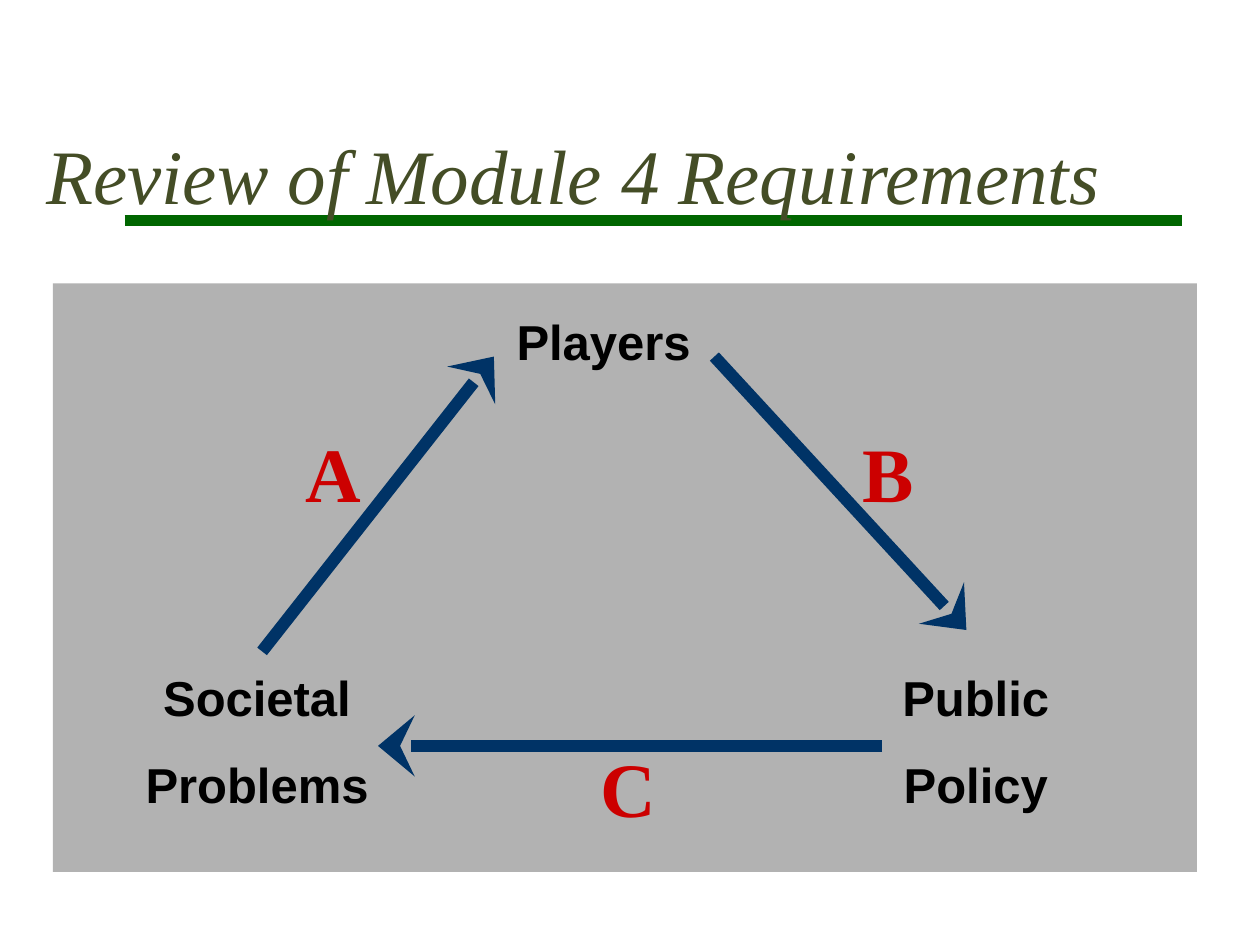
from dataclasses import dataclass

from lxml import etree
from pptx import Presentation
from pptx.dml.color import RGBColor
from pptx.enum.shapes import MSO_CONNECTOR, MSO_SHAPE
from pptx.enum.text import MSO_ANCHOR, PP_ALIGN
from pptx.oxml.ns import qn
from pptx.util import Inches, Pt

STRAIGHT = MSO_CONNECTOR.STRAIGHT
RECTANGLE = MSO_SHAPE.RECTANGLE
TOP, MIDDLE = MSO_ANCHOR.TOP, MSO_ANCHOR.MIDDLE
LEFT, CENTER = PP_ALIGN.LEFT, PP_ALIGN.CENTER


@dataclass(frozen=True)
class Theme:
    rule: str = "006600"
    title: str = "444D26"
    panel: str = "B2B2B2"
    label: str = "000000"
    arrow: str = "003366"
    letter: str = "CC0000"
    serif: str = "Times New Roman"
    sans: str = "Arial"
    large: int = 44
    medium: int = 28
    gap: int = 16
    rule_width: int = 6
    arrow_width: int = 7


class SlideBuilder:
    """Draws themed elements on one slide."""

    def __init__(self, slide, theme):
        self.s = slide
        self.theme = theme

    def line(self, start, end, color, width):
        ends = [Inches(v) for v in (*start, *end)]
        line = self.s.shapes.add_connector(STRAIGHT, *ends)
        line.line.color.rgb = RGBColor.from_string(color)
        line.line.width = Pt(width)
        etree.SubElement(line._element.spPr, qn("a:effectLst"))
        return line

    def arrow(self, start, end):
        line = self.line(start, end, self.theme.arrow, self.theme.arrow_width)
        etree.SubElement(line.line._get_or_add_ln(), qn("a:tailEnd"),
                         type="stealth", w="lg", len="med")

    def panel(self, box):
        sp = self.s.shapes.add_shape(RECTANGLE, *map(Inches, box))
        sp.shadow.inherit = False
        sp.fill.solid()
        sp.fill.fore_color.rgb = RGBColor.from_string(self.theme.panel)
        sp.line.fill.background()

    def text(self, box, lines, font, size, color, bold=False, italic=False,
             align=LEFT, anchor=TOP):
        tf = self.s.shapes.add_textbox(*map(Inches, box)).text_frame
        tf.word_wrap = True
        tf.vertical_anchor = anchor
        for i, words in enumerate(lines):
            p = tf.add_paragraph() if i else tf.paragraphs[0]
            p.text = words
            p.alignment = align
            if i:
                p.space_before = Pt(self.theme.gap)
            p.font.name = font
            p.font.size = Pt(size)
            p.font.bold = bold
            p.font.italic = italic
            p.font.color.rgb = RGBColor.from_string(color)

    def title(self, box, words):
        t = self.theme
        self.text(box, [words], t.serif, t.large, t.title, italic=True, anchor=MIDDLE)

    def label(self, box, *lines):
        t = self.theme
        self.text(box, lines, t.sans, t.medium, t.label, bold=True, align=CENTER)

    def letter(self, box, words):
        t = self.theme
        self.text(box, [words], t.serif, t.large, t.letter, bold=True)


def main():
    prs = Presentation()
    prs.slide_width, prs.slide_height = Inches(10), Inches(7.5)
    theme = Theme()
    b = SlideBuilder(prs.slides.add_slide(prs.slide_layouts[6]), theme)

    b.line((0.99, 1.75), (9.38, 1.75), theme.rule, theme.rule_width)
    b.title((0.27, 0.75, 10.06, 1.25), "Review of Module 4 Requirements")
    b.panel((0.42, 2.25, 9.08, 4.67))

    b.label((3.75, 2.42, 2.08, 0.57), "Players")
    b.label((6.08, 5.25, 3.33, 1.27), "Public", "Policy")
    b.label((0.83, 5.25, 2.42, 1.27), "Societal", "Problems")

    b.arrow((2.08, 5.17), (3.92, 2.83))
    b.arrow((5.67, 2.83), (7.67, 5))
    b.arrow((7, 5.92), (3, 5.92))

    b.letter((2.33, 3.33, 0.75, 0.83), "A")
    b.letter((6.75, 3.33, 0.67, 0.83), "B")
    b.letter((4.67, 5.83, 0.75, 0.83), "C")

    prs.save("out.pptx")


if __name__ == "__main__":
    main()
